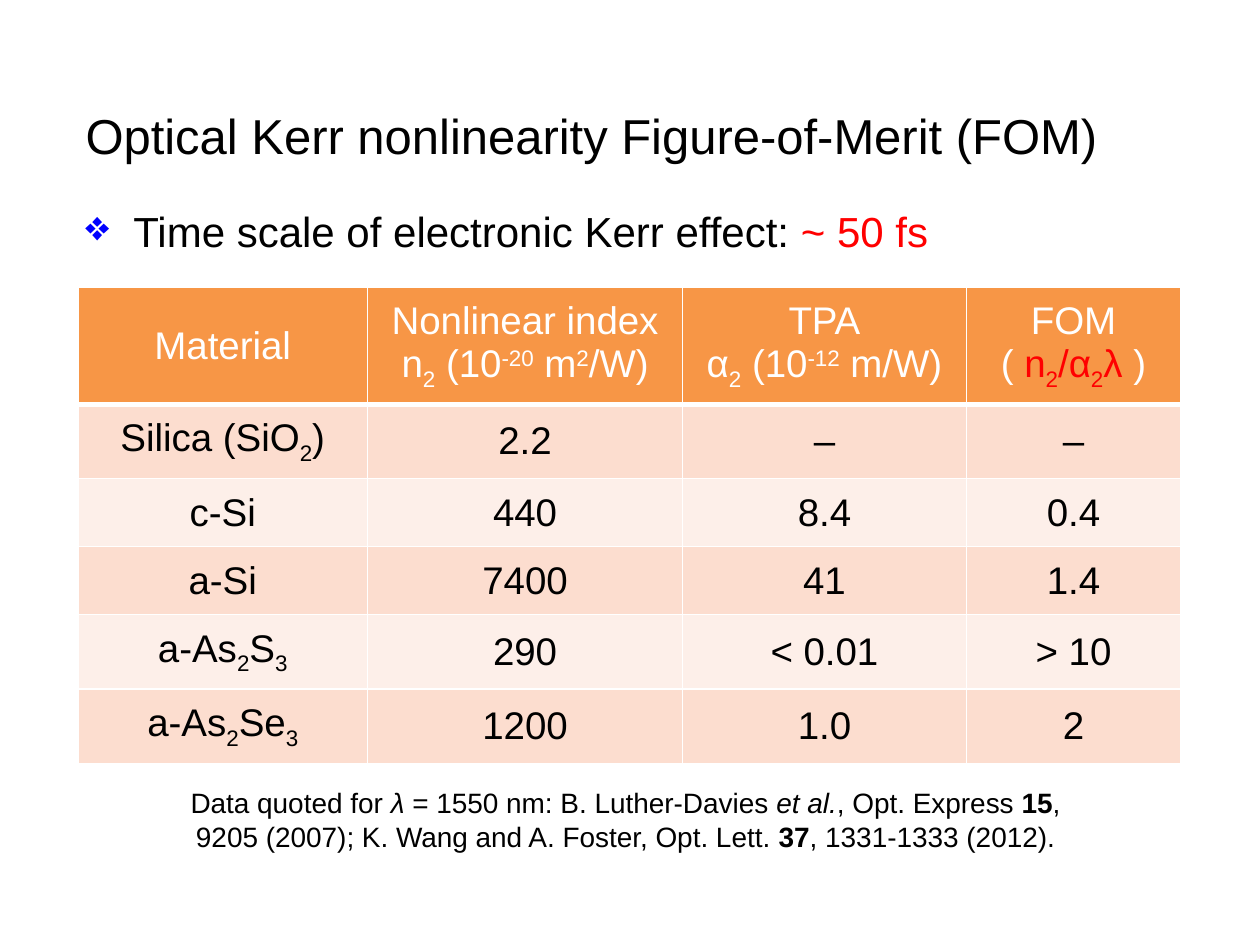
from typing import NamedTuple

import pptx
import pptx.dml.color
import pptx.enum.text
import pptx.oxml
import pptx.oxml.ns
import pptx.util
from pptx.util import Cm, Pt

FONT = "Arial"
BLACK, WHITE, RED, BLUE = "000000", "FFFFFF", "FF0000", "0000FF"
HEADER_FILL = "F79646"
BAND_FILLS = ("FCDDCF", "FDEFE9")
CENTER = pptx.enum.text.PP_ALIGN.CENTER
LEFT = pptx.enum.text.PP_ALIGN.LEFT
MIDDLE = pptx.enum.text.MSO_ANCHOR.MIDDLE


class Run(NamedTuple):
    text: str
    color: str = ""
    base: int = 0
    bold: bool = False
    italic: bool = False


class Box(NamedTuple):
    left: float
    top: float
    width: float
    height: float


def sub(text: str, color: str = "") -> Run:
    return Run(text, color, base=-25)


def sup(text: str) -> Run:
    return Run(text, base=30)


TITLE_BOX = Box(1.47, 1.52, 23.06, 2.41)
BULLET_BOX = Box(1.47, 4.01, 22.43, 1.27)
TABLE_BOX = Box(1.57, 5.79, 22.23, 9.58)
SOURCE_BOX = Box(3.3, 15.72, 18.62, 1.63)

COLUMN_WIDTHS = (5.84, 6.35, 5.72, 4.32)
ROW_HEIGHTS = (2.34, 1.5, 1.37, 1.37, 1.5, 1.5)

# Each header cell is a list of lines, each line a list of runs.
HEADER = [
    [[Run("Material")]],
    [[Run("Nonlinear index")],
     [Run("n"), sub("2"), Run(" (10"), sup("-20"), Run(" m"), sup("2"), Run("/W)")]],
    [[Run("TPA")],
     [Run("α"), sub("2"), Run(" (10"), sup("-12"), Run(" m/W)")]],
    [[Run("FOM")],
     [Run("( "), Run("n", RED), sub("2", RED), Run("/α", RED), sub("2", RED),
      Run("λ ", RED), Run(")")]],
]
MATERIALS = [
    ([Run("Silica (SiO"), sub("2"), Run(")")], "2.2", "‒", "‒"),
    ([Run("c-Si")], "440", "8.4", "0.4"),
    ([Run("a-Si")], "7400", "41", "1.4"),
    ([Run("a-As"), sub("2"), Run("S"), sub("3")], "290", "< 0.01", "> 10"),
    ([Run("a-As"), sub("2"), Run("Se"), sub("3")], "1200", "1.0", "2"),
]
BULLET = [Run("Time scale of electronic Kerr effect: "), Run("~ 50 fs", RED)]
SOURCE = [
    Run("Data quoted for "), Run("λ", italic=True),
    Run(" = 1550 nm: B. Luther-Davies "), Run("et al.", italic=True),
    Run(", Opt. Express "), Run("15", bold=True),
    Run(", 9205 (2007); K. Wang and A. Foster, Opt. Lett. "),
    Run("37", bold=True), Run(", 1331-1333 (2012)."),
]


def rgb(value: str) -> pptx.dml.color.RGBColor:
    return pptx.dml.color.RGBColor.from_string(value)


def add_xml(parent, xml: str) -> None:
    ns = pptx.oxml.ns.nsdecls("a")
    parent.append(pptx.oxml.parse_xml(xml.replace("/>", f" {ns}/>", 1)
                                      if xml.endswith("/>") and xml.count("<") == 1
                                      else xml.replace(">", f" {ns}>", 1)))


def write_lines(tf, lines: list, size: float, color: str, align) -> None:
    for i, runs in enumerate(lines):
        p = tf.paragraphs[0] if i == 0 else tf.add_paragraph()
        p.alignment = align
        p.font.name = FONT
        p.font.size = Pt(size)
        for run in runs:
            r = p.add_run()
            r.text = run.text
            r.font.color.rgb = rgb(run.color or color)
            r.font.bold = run.bold
            r.font.italic = run.italic
            if run.base:
                r._r.get_or_add_rPr().set("baseline", str(run.base * 1000))


def place(sp, box: Box) -> None:
    sp.left, sp.top, sp.width, sp.height = map(Cm, box)


def add_text(s, box: Box):
    tf = s.shapes.add_textbox(*map(Cm, box)).text_frame
    tf.word_wrap = True
    return tf


def add_bullet(p, char: str, color: str, indent: float) -> None:
    pPr = p._p.get_or_add_pPr()
    pPr.set("marL", str(Cm(indent)))
    pPr.set("indent", str(-Cm(indent)))
    add_xml(pPr, f'<a:buClr><a:srgbClr val="{color}"/></a:buClr>')
    add_xml(pPr, f'<a:buChar char="{char}"/>')


def set_borders(cell, top: float, bottom: float) -> None:
    """White cell borders; top and bottom widths in points, sides 1 pt."""
    tcPr = cell._tc.get_or_add_tcPr()
    for side, width in (("L", 1), ("R", 1), ("T", top), ("B", bottom)):
        add_xml(tcPr, f'<a:ln{side} w="{Pt(width)}"><a:solidFill>'
                      f'<a:srgbClr val="{WHITE}"/></a:solidFill></a:ln{side}>')


def add_fom_table(s) -> None:
    rows = [HEADER] + [[[name]] + [[[Run(v)]] for v in values]
                       for name, *values in MATERIALS]
    table = s.shapes.add_table(len(rows), len(HEADER), *map(Cm, TABLE_BOX)).table
    for column, width in zip(table.columns, COLUMN_WIDTHS):
        column.width = Cm(width)
    for i, (row, height) in enumerate(zip(rows, ROW_HEIGHTS)):
        table.rows[i].height = Cm(height)
        for j, lines in enumerate(row):
            cell = table.cell(i, j)
            set_borders(cell, top=3 if i == 1 else 1, bottom=3 if i == 0 else 1)
            cell.fill.solid()
            cell.fill.fore_color.rgb = rgb(BAND_FILLS[(i - 1) % 2] if i else HEADER_FILL)
            cell.vertical_anchor = MIDDLE
            cell.margin_left = cell.margin_right = Cm(0.25)
            cell.margin_top = cell.margin_bottom = Cm(0.25)
            write_lines(cell.text_frame, lines, 22, BLACK if i else WHITE, CENTER)


def main() -> None:
    prs = pptx.Presentation()
    prs.slide_width, prs.slide_height = Cm(25.4), Cm(19.05)
    s = prs.slides.add_slide(prs.slide_layouts[5])

    title = s.shapes.title
    place(title, TITLE_BOX)
    title.text_frame.vertical_anchor = MIDDLE
    write_lines(title.text_frame, [[Run("Optical Kerr nonlinearity Figure-of-Merit (FOM)")]],
                28, BLACK, LEFT)

    add_fom_table(s)
    write_lines(add_text(s, SOURCE_BOX), [SOURCE], 16, BLACK, CENTER)

    tf = add_text(s, BULLET_BOX)
    add_bullet(tf.paragraphs[0], "❖", BLUE, 0.97)
    write_lines(tf, [BULLET], 24, BLACK, LEFT)

    prs.save("out.pptx")


if __name__ == "__main__":
    main()
